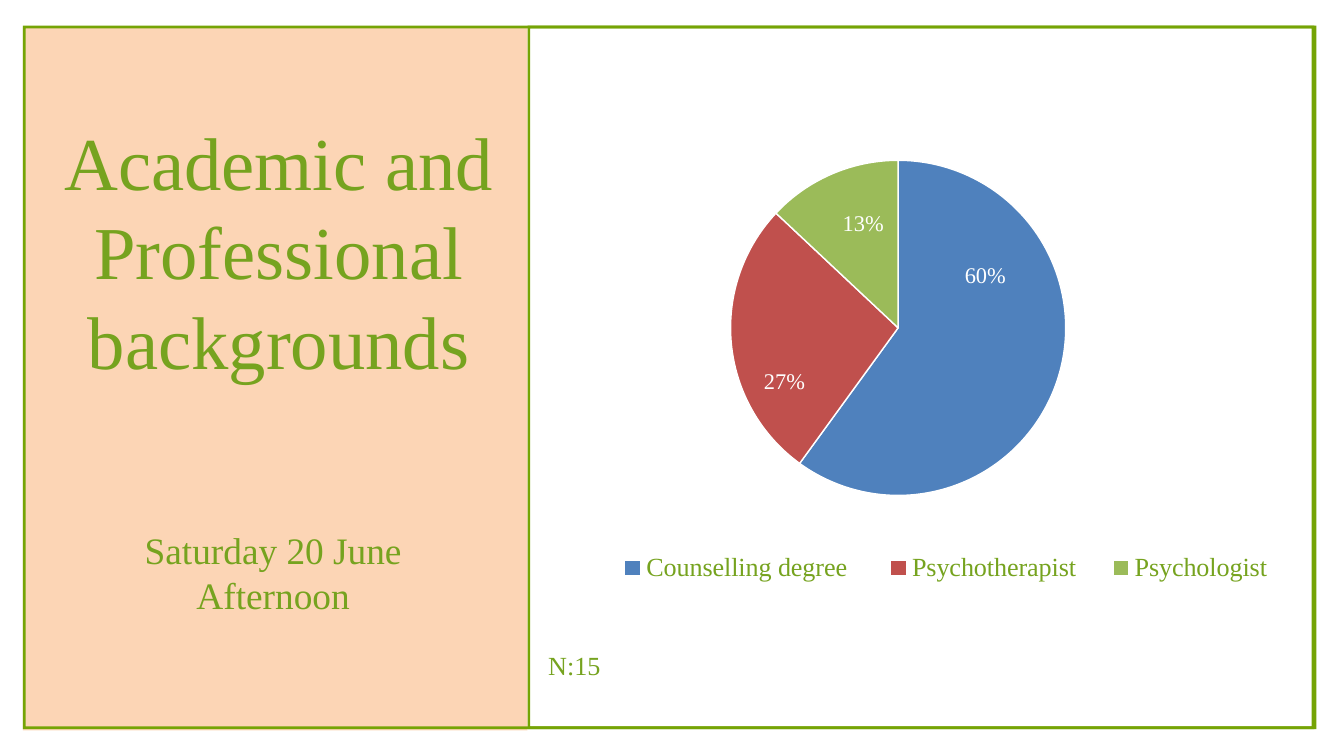
from lxml import etree
from pptx import Presentation
from pptx.chart.data import CategoryChartData
from pptx.dml.color import RGBColor
from pptx.enum.chart import XL_CHART_TYPE as ChartType, XL_LABEL_POSITION as LabelPosition, XL_LEGEND_POSITION as LegendPosition
from pptx.enum.shapes import MSO_SHAPE as Shape
from pptx.enum.text import PP_ALIGN as Align
from pptx.oxml import parse_xml
from pptx.oxml.ns import nsdecls, qn
from pptx.util import Pt

GREEN = "76A31F"
BORDER = "75A405"


def color(value):
    return RGBColor.from_string(value)


def style(font, size, value):
    font.name = "Times New Roman"
    font.size = Pt(size)
    font.color.rgb = color(value)


presentation = Presentation()
presentation.slide_width = Pt(1440)
presentation.slide_height = Pt(810)
slide = presentation.slides.add_slide(presentation.slide_layouts[6])

panel = slide.shapes.add_shape(Shape.RECTANGLE, Pt(24.5), Pt(28.8), Pt(540.7), Pt(753.8))
panel.shadow.inherit = False
panel.fill.solid()
panel.fill.fore_color.rgb = color("FCD5B5")
panel.line.fill.background()

top, bottom, thickness = 27.4, 781.2, 2.9
for left, right, right_thickness in [(24.5, 1410.5, 2.9), (565.2, 1408.3, 2.9)]:
    builder = slide.shapes.build_freeform(Pt(left), Pt(top), scale=1.0)
    builder.add_line_segments([(Pt(left), Pt(bottom)), (Pt(right), Pt(bottom)), (Pt(right), Pt(top))])
    inner_left, inner_right = left + thickness, right - right_thickness
    inner_top, inner_bottom = top + thickness, bottom - thickness
    builder.move_to(Pt(inner_left), Pt(inner_top))
    builder.add_line_segments([(Pt(inner_right), Pt(inner_top)), (Pt(inner_right), Pt(inner_bottom)), (Pt(inner_left), Pt(inner_bottom))])
    frame = builder.convert_to_shape()
    frame.shadow.inherit = False
    frame.fill.solid()
    frame.fill.fore_color.rgb = color(BORDER)
    frame.line.fill.background()

texts = [
    ("Academic and Professional backgrounds", 59, 123.8, 479.5, 290.9, 80, 96, Align.CENTER, 0),
    ("N:15", 580.3, 692.6, 836.6, 70.6, 28, None, Align.LEFT, 1),
    ("Saturday 20 June Afternoon", 127.4, 561.6, 330.5, 104.4, 40, 48, Align.CENTER, 1),
]
for text, left, top, width, height, size, spacing, alignment, inset in texts:
    box = slide.shapes.add_textbox(Pt(left), Pt(top), Pt(width), Pt(height))
    text_frame = box.text_frame
    text_frame.word_wrap = True
    text_frame.margin_left = text_frame.margin_right = Pt(7.2 * inset)
    text_frame.margin_top = text_frame.margin_bottom = Pt(3.6 * inset)
    text_frame.text = text
    paragraph = text_frame.paragraphs[0]
    paragraph.alignment = alignment
    if spacing:
        paragraph.line_spacing = Pt(spacing)
    style(paragraph.runs[0].font, size, GREEN)

chart_data = CategoryChartData()
chart_data.categories = ["Counselling degree ", "Psychotherapist", "Psychologist"]
chart_data.add_series("Series 1", [60, 27, 13])
chart = slide.shapes.add_chart(ChartType.PIE, Pt(444.2), Pt(27.4), Pt(1026), Pt(605.5), chart_data).chart
chart.has_title = False
chart.font.name = "Calibri"
chart.font.size = Pt(10)
chart.has_legend = True
chart.legend.position = LegendPosition.BOTTOM
chart.legend.include_in_layout = False
style(chart.legend.font, 28, GREEN)

plot = chart.plots[0]
plot.vary_by_categories = True
series = plot.series[0]
labels = series.data_labels
labels.show_value = False
labels.show_percentage = True
labels.number_format = "0%"
labels.number_format_is_linked = False
labels.position = LabelPosition.INSIDE_END
style(labels.font, 24, "FFFFFF")

slices = [("4F81BD", -0.05, -0.16), ("C0504D", 0.03, 0.09), ("9BBB59", 0.01, 0.06)]
for index, (fill, x, y) in enumerate(slices):
    point = series.points[index]
    point.format.fill.solid()
    point.format.fill.fore_color.rgb = color(fill)
    point.format.line.color.rgb = color("FFFFFF")
    point.format.line.width = Pt(1.5)
    style(point.data_label.font, 24, "FFFFFF")
    point.data_label.position = LabelPosition.INSIDE_END
    label = labels._element.findall(qn("c:dLbl"))[index]
    label.find(qn("c:showVal")).set("val", "0")
    label.find(qn("c:showPercent")).set("val", "1")
    label.insert(1, parse_xml(
        f'<c:layout {nsdecls("c")}><c:manualLayout><c:x val="{x}"/><c:y val="{y}"/></c:manualLayout></c:layout>'))

plot_area = chart._chartSpace.chart.plotArea
layouts = [(plot_area, 0, True, (0.33, 0.16, 0.35, 0.75)), (chart.legend._element, 1, False, (0.19, 0.92, 0.73, 0.08))]
for parent, position, is_inner, values in layouts:
    for old in parent.findall(qn("c:layout")):
        parent.remove(old)
    layout = etree.Element(qn("c:layout"))
    manual = etree.SubElement(layout, qn("c:manualLayout"))
    if is_inner:
        etree.SubElement(manual, qn("c:layoutTarget"), val="inner")
    for name in ("xMode", "yMode"):
        etree.SubElement(manual, qn(f"c:{name}"), val="edge")
    for name, value in zip("xywh", values):
        etree.SubElement(manual, qn(f"c:{name}"), val=str(value))
    parent.insert(position, layout)

presentation.save("out.pptx")
